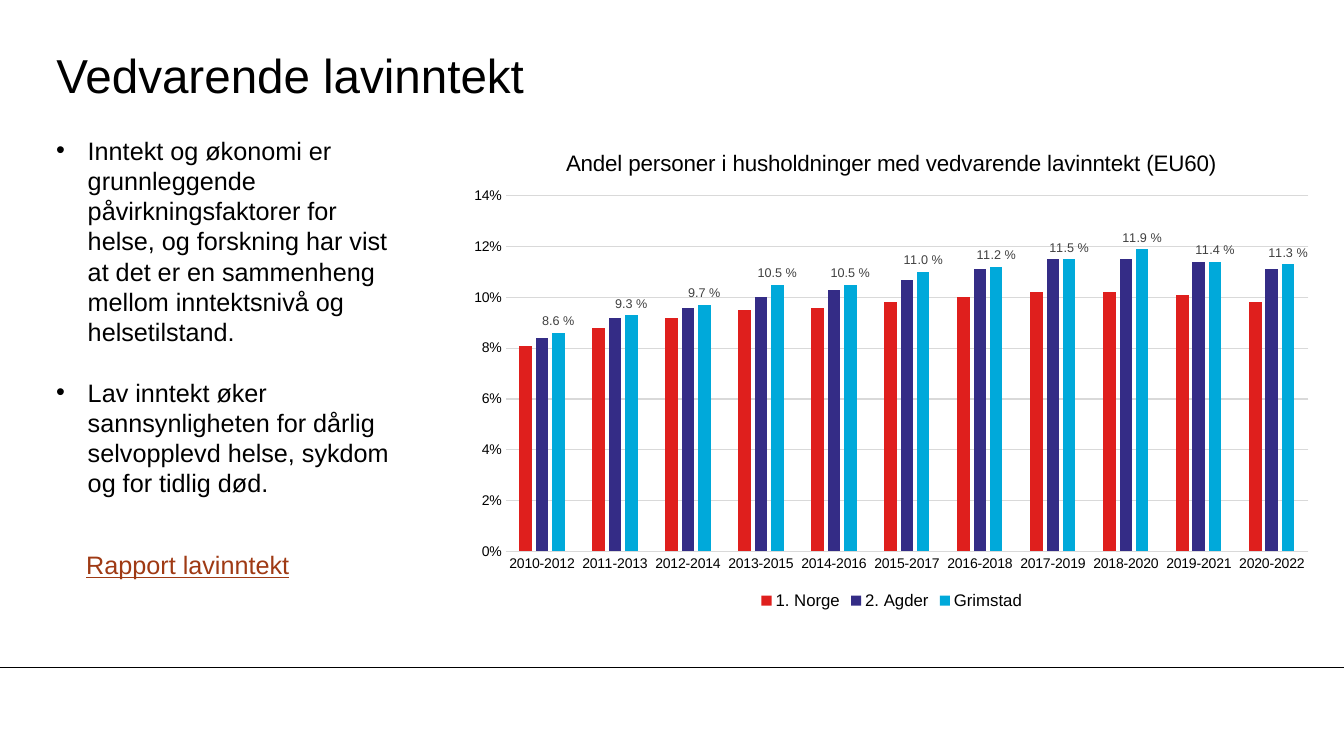
from lxml import etree
from pptx import Presentation
from pptx import util as u
from pptx.chart import data
from pptx.dml import color
from pptx.enum import chart as charts
from pptx.enum import shapes, text
from pptx.oxml import ns

BLACK = color.RGBColor(0x00, 0x00, 0x00)
LABEL_GREY = color.RGBColor(0x40, 0x40, 0x40)
GRID_GREY = color.RGBColor(0xD9, 0xD9, 0xD9)
LINK_RUST = color.RGBColor(0x9F, 0x3A, 0x14)
RED = color.RGBColor(0xDF, 0x1F, 0x1D)
INDIGO = color.RGBColor(0x34, 0x2C, 0x86)
CYAN = color.RGBColor(0x00, 0xA9, 0xDA)

PERIODS = [f"{year}-{year + 2}" for year in range(2010, 2021)]
LOW_INCOME = [
    ("1. Norge", RED,
     (0.081, 0.088, 0.092, 0.095, 0.096, 0.098, 0.1, 0.102, 0.102, 0.101, 0.098)),
    ("2. Agder", INDIGO,
     (0.084, 0.092, 0.096, 0.1, 0.103, 0.107, 0.111, 0.115, 0.115, 0.114, 0.111)),
    ("Grimstad", CYAN,
     (0.086, 0.093, 0.097, 0.105, 0.105, 0.11, 0.112, 0.115, 0.119, 0.114, 0.113)),
]
FACTS = [
    "Inntekt og økonomi er grunnleggende påvirkningsfaktorer for helse, og forskning "
    "har vist at det er en sammenheng mellom inntektsnivå og helsetilstand.",
    "Lav inntekt øker sannsynligheten for dårlig selvopplevd helse, sykdom og for "
    "tidlig død.",
]


class SlideBuilder:
    """Draws styled elements on the current slide."""

    def __init__(self, slide, font_name="Arial"):
        self.slide = slide
        self.font_name = font_name

    def style(self, font, size, colour=BLACK, underline=None):
        font.name = self.font_name
        font.size = u.Pt(size)
        font.bold = False
        font.color.rgb = colour
        if underline:
            font.underline = True

    def line(self, left, top, right, bottom):
        connector = self.slide.shapes.add_connector(
            shapes.MSO_CONNECTOR.STRAIGHT, *map(u.Pt, (left, top, right, bottom)))
        connector.line.color.rgb = BLACK
        connector.line.width = u.Pt(0.75)
        etree.SubElement(connector._element.spPr, ns.qn("a:effectLst"))

    def text_box(self, box, lines, size, colour=BLACK, underline=None, indent=0, gap=0):
        shape = self.slide.shapes.add_textbox(*map(u.Pt, box))
        frame = shape.text_frame
        frame.word_wrap = True
        frame.auto_size = text.MSO_AUTO_SIZE.SHAPE_TO_FIT_TEXT
        for index, line in enumerate(lines):
            paragraph = frame.paragraphs[0] if index == 0 else frame.add_paragraph()
            paragraph.text = line
            if index:
                paragraph.space_before = u.Pt(gap)
            if indent:
                self.bullet(paragraph, indent)
            self.style(paragraph.font, size, colour, underline)
        return frame

    def bullet(self, paragraph, indent):
        properties = paragraph._p.get_or_add_pPr()
        properties.set("marL", str(u.Pt(indent)))
        properties.set("indent", str(-u.Pt(indent)))
        etree.SubElement(properties, ns.qn("a:buFont"), typeface=self.font_name)
        etree.SubElement(properties, ns.qn("a:buChar"), char="•")

    def title(self, box, line):
        frame = self.text_box(box, [line], 34)
        frame.auto_size = text.MSO_AUTO_SIZE.NONE
        frame.vertical_anchor = text.MSO_ANCHOR.MIDDLE
        frame.margin_left = frame.margin_right = 0
        frame.margin_top = frame.margin_bottom = 0

    def place(self, element, position, **fractions):
        for old_layout in element.findall(ns.qn("c:layout")):
            element.remove(old_layout)
        layout = etree.Element(ns.qn("c:layout"))
        manual = etree.SubElement(layout, ns.qn("c:manualLayout"))
        if "w" in fractions:
            etree.SubElement(manual, ns.qn("c:layoutTarget"), val="inner")
        for mode in ("xMode", "yMode"):
            etree.SubElement(manual, ns.qn(f"c:{mode}"), val="edge")
        for key, value in fractions.items():
            etree.SubElement(manual, ns.qn(f"c:{key}"), val=str(value))
        element.insert(position, layout)

    def axis(self, axis):
        axis.major_tick_mark = axis.minor_tick_mark = charts.XL_TICK_MARK.NONE
        self.style(axis.tick_labels.font, 10)

    def column_chart(self, box, heading, categories, rows):
        chart_data = data.CategoryChartData(number_format="0.0%")
        chart_data.categories = categories
        for name, _, values in rows:
            chart_data.add_series(name, values)
        chart = self.slide.shapes.add_chart(
            charts.XL_CHART_TYPE.COLUMN_CLUSTERED, *map(u.Pt, box), chart_data).chart
        self.style(chart.font, 10)

        chart.has_title = True
        paragraph = chart.chart_title.text_frame.paragraphs[0]
        paragraph.text = heading
        self.style(paragraph.font, 16)
        self.place(chart.chart_title._element, 1, x=0.12, y=0.04)
        self.place(chart._chartSpace.chart.plotArea, 0, x=0.055, y=0.145, w=0.925, h=0.728)

        chart.has_legend = True
        chart.legend.position = charts.XL_LEGEND_POSITION.BOTTOM
        chart.legend.include_in_layout = False
        self.style(chart.legend.font, 12)

        self.axis(chart.category_axis)
        chart.category_axis.format.line.color.rgb = GRID_GREY
        chart.category_axis.format.line.width = u.Pt(0.75)
        value_axis = chart.value_axis
        self.axis(value_axis)
        value_axis.minimum_scale, value_axis.maximum_scale = 0, 0.14
        value_axis.major_unit = 0.02
        value_axis.tick_labels.number_format = "0%"
        value_axis.tick_labels.number_format_is_linked = False
        value_axis.format.line.fill.background()
        value_axis.major_gridlines.format.line.color.rgb = GRID_GREY
        value_axis.major_gridlines.format.line.width = u.Pt(0.75)

        plot = chart.plots[0]
        plot.gap_width, plot.overlap = 219, -27
        plot.vary_by_categories = False
        for series, (_, colour, _) in zip(plot.series, rows):
            series.format.fill.solid()
            series.format.fill.fore_color.rgb = colour
        labels = plot.series[-1].data_labels
        labels.show_value = True
        labels.position = charts.XL_LABEL_POSITION.OUTSIDE_END
        labels.number_format = "0.0\\ %"
        labels.number_format_is_linked = False
        self.style(labels.font, 9, LABEL_GREY)


def main():
    presentation = Presentation()
    presentation.slide_width, presentation.slide_height = u.Pt(960), u.Pt(540)
    builder = SlideBuilder(presentation.slides.add_slide(presentation.slide_layouts[6]))
    builder.line(0, 476.6, 960, 476.6)
    builder.title((40.3, 26, 799, 54), "Vedvarende lavinntekt")
    builder.text_box((33.1, 92.9, 252, 269), FACTS, 18, indent=22.5, gap=21.6)
    builder.text_box((54.5, 389, 191, 29), ["Rapport lavinntekt"], 18, LINK_RUST, True)
    builder.column_chart(
        (327, 89.3, 620, 349),
        "Andel personer i husholdninger med vedvarende lavinntekt (EU60)",
        PERIODS, LOW_INCOME)
    presentation.save("out.pptx")


if __name__ == "__main__":
    main()
